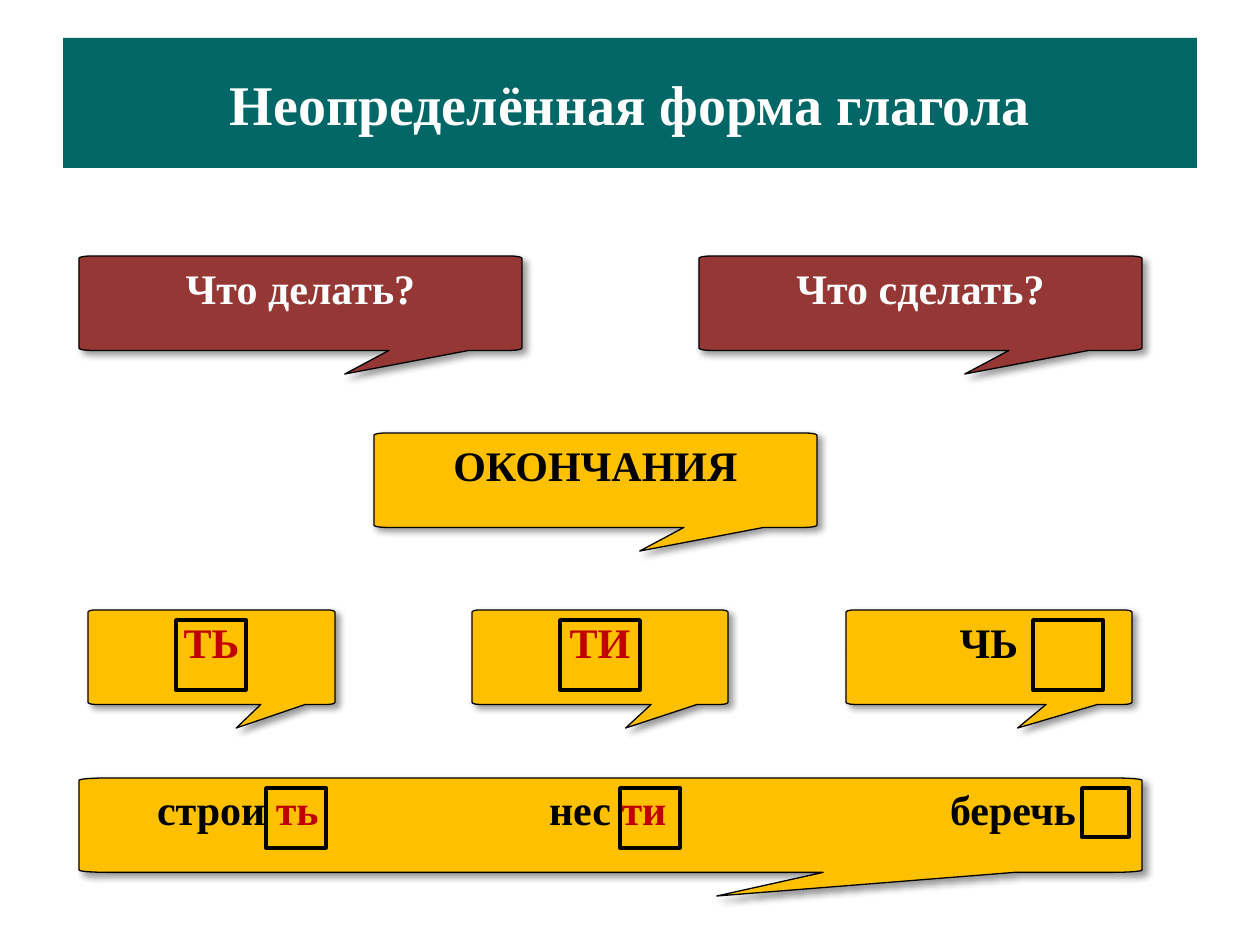
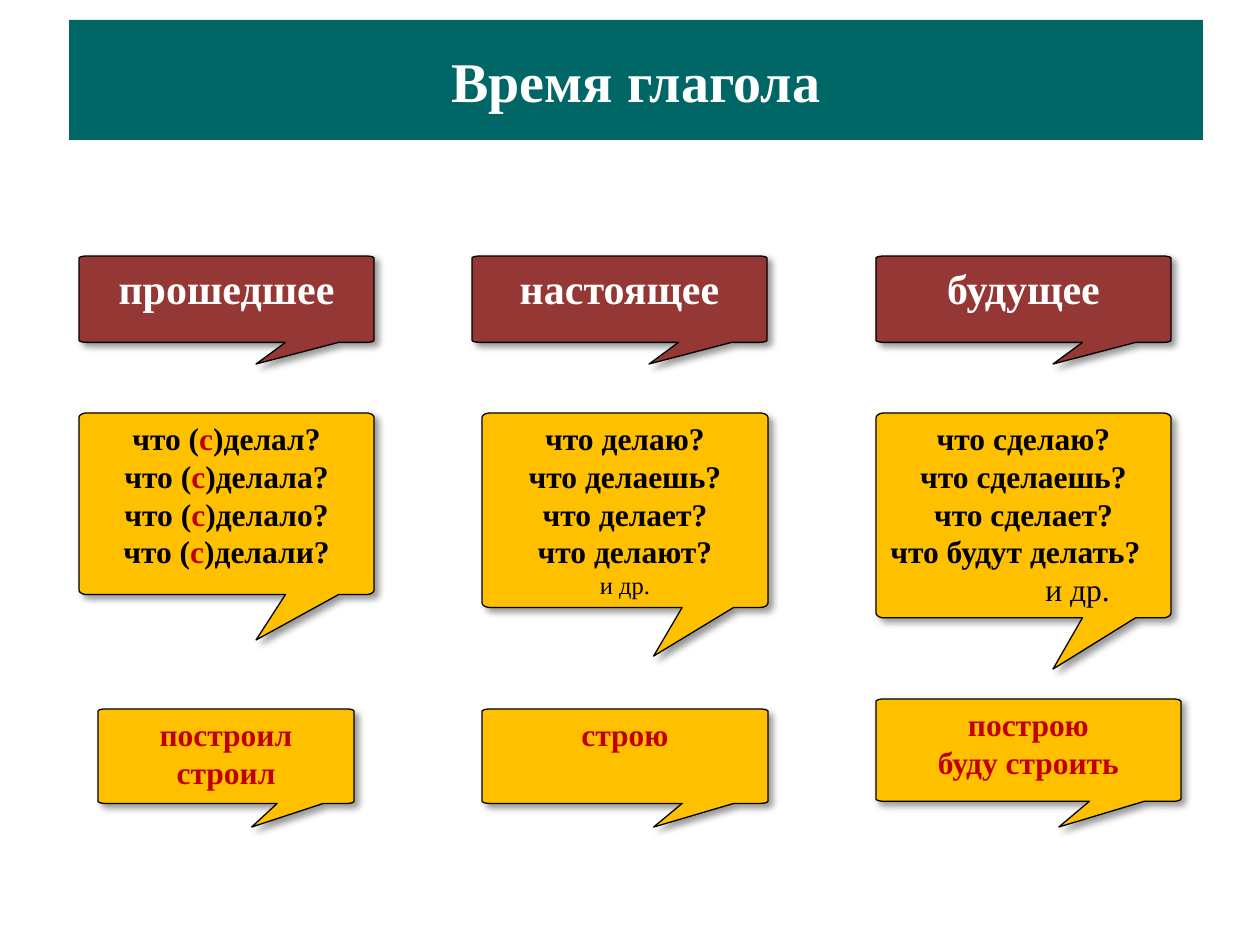
import math
from dataclasses import dataclass

import pptx
import pptx.dml.color
import pptx.enum.shapes
import pptx.enum.text
import pptx.oxml
import pptx.oxml.ns
import pptx.util

ALIGN = pptx.enum.text.PP_ALIGN
ANCHOR = pptx.enum.text.MSO_ANCHOR
RECTANGLE = pptx.enum.shapes.MSO_SHAPE.RECTANGLE
PX_PER_INCH = 126


@dataclass(frozen=True)
class Theme:
    font: str = "Times New Roman"
    band: str = "006666"
    question: str = "953735"
    answer: str = "FFC000"
    accent: str = "C00000"
    dark: str = "000000"
    light: str = "FFFFFF"
    title_size: int = 32
    label_size: int = 24
    list_size: int = 18
    small_size: int = 14


@dataclass
class Line:
    """One paragraph: (text, colour) spans and the ways it differs from its neighbours."""
    spans: list
    size: int = 0
    bold: bool = True
    left: int = 0
    right: int = 0
    tabs: tuple = ()


THEME = Theme()


def px(length):
    return pptx.util.Emu(round(length * 914400 / PX_PER_INCH))


def rgb(code):
    return pptx.dml.color.RGBColor.from_string(code)


def plain(color, *texts):
    return [Line([(text, color)]) for text in texts]


def add_soft_shadow(shape):
    shape.shadow.inherit = False
    effects = shape._element.spPr.find(pptx.oxml.ns.qn("a:effectLst"))
    effects.append(pptx.oxml.parse_xml(
        f'<a:outerShdw {pptx.oxml.ns.nsdecls("a")} blurRad="50800" dist="38100" dir="2700000" '
        'algn="tl" rotWithShape="0"><a:srgbClr val="000000"><a:alpha val="40000"/>'
        '</a:srgbClr></a:outerShdw>'))


def callout_outline(left, top, width, height):
    """Rounded body over four fifths of the box, with a tail reaching its bottom edge."""
    right, bottom = left + width, top + 0.8 * height
    rx, ry = 0.027 * width, 0.02 * height

    def corner(center_x, center_y, start):
        angles = [math.radians(start + step * 15) for step in range(7)]
        return [(center_x + rx * math.cos(a), center_y + ry * math.sin(a)) for a in angles]

    tail = [(left + 0.88 * width, bottom), (left + 0.6 * width, top + height),
            (left + 0.7 * width, bottom)]
    points = (corner(left + rx, top + ry, 180) + corner(right - rx, top + ry, 270)
              + corner(right - rx, bottom - ry, 0) + tail + corner(left + rx, bottom - ry, 90))
    return [(px(x), px(y)) for x, y in points]


def write_line(para, line, size):
    para.alignment = ALIGN.LEFT if line.tabs else ALIGN.CENTER
    para.line_spacing = 1.0
    para.font.name = THEME.font
    para.font.size = pptx.util.Pt(line.size or size)
    para.font.bold = line.bold
    properties = para._p.get_or_add_pPr()
    properties.set("marL", str(px(line.left)))
    properties.set("marR", str(px(line.right)))
    if line.tabs:
        stops = "".join(f'<a:tab pos="{px(stop)}" algn="l"/>' for stop in line.tabs)
        tab_list = pptx.oxml.parse_xml(
            f'<a:tabLst {pptx.oxml.ns.nsdecls("a")}>{stops}</a:tabLst>')
        properties.find(pptx.oxml.ns.qn("a:defRPr")).addprevious(tab_list)
    for text, color in line.spans:
        span = para.add_run()
        span.text = text
        span.font.color.rgb = rgb(color)


def add_callout(page, box, fill, lines, size=THEME.label_size):
    start, *rest = callout_outline(*box)
    builder = page.shapes.build_freeform(*start, scale=1.0)
    builder.add_line_segments(rest, close=True)
    shape = builder.convert_to_shape()
    shape.fill.solid()
    shape.fill.fore_color.rgb = rgb(fill)
    shape.line.color.rgb = rgb(THEME.dark)
    shape.line.width = pptx.util.Pt(0.75)
    add_soft_shadow(shape)
    frame = shape.text_frame
    frame.word_wrap = True
    frame.vertical_anchor = ANCHOR.TOP
    frame.margin_left = frame.margin_right = frame.margin_top = px(6)
    for index, line in enumerate(lines):
        write_line(frame.add_paragraph() if index else frame.paragraphs[0], line, size)


def add_ending_frame(page, left, top, width, height):
    frame = page.shapes.add_shape(RECTANGLE, px(left), px(top), px(width), px(height))
    frame.shadow.inherit = False
    frame.fill.background()
    frame.line.color.rgb = rgb(THEME.dark)
    frame.line.width = pptx.util.Pt(2)


def add_titled_page(deck, text, left, top, width, height):
    page = deck.slides.add_slide(deck.slide_layouts.get_by_name("Title Only"))
    title = page.shapes.title
    title.left, title.top, title.width, title.height = map(px, (left, top, width, height))
    title.fill.solid()
    title.fill.fore_color.rgb = rgb(THEME.band)
    title.text_frame.text = text
    title.text_frame.vertical_anchor = ANCHOR.MIDDLE
    para = title.text_frame.paragraphs[0]
    para.alignment = ALIGN.CENTER
    para.font.name = THEME.font
    para.font.size = pptx.util.Pt(THEME.title_size)
    para.font.bold = True
    para.font.color.rgb = rgb(THEME.light)
    return page


def add_endings(page, top):
    endings = [  # text, colour, callout left and width, frame left and width
        ("ТЬ", THEME.accent, 88, 247, 176, 70),
        ("ТИ", THEME.accent, 472, 256, 560, 80),
        ("ЧЬ", THEME.dark, 846, 286, 1033, 70),
    ]
    for text, color, left, width, frame_left, frame_width in endings:
        add_callout(page, (left, top, width, 118), THEME.answer, plain(color, text))
        add_ending_frame(page, frame_left, top + 10, frame_width, 70)


def add_verb_examples(page, left, top):
    words = Line([("\tстрои ", THEME.dark), ("ть", THEME.accent),
                  ("\tнес ", THEME.dark), ("ти", THEME.accent),
                  ("\tберечь", THEME.dark)], tabs=(72, 464, 865))
    add_callout(page, (left, top, 1063, 118), THEME.answer, [words])
    for offset, width, height in [(187, 60, 60), (541, 60, 60), (1003, 47, 49)]:
        add_ending_frame(page, left + offset, top + 10, width, height)


def build_infinitive_page(deck):
    page = add_titled_page(deck, "Неопределённая форма глагола", 63, 38, 1134, 130)
    for column, question in enumerate(["Что делать?", "Что сделать?"]):
        add_callout(page, (79 + 620 * column, 256, 443, 118), THEME.question,
                    plain(THEME.light, question))
    add_callout(page, (374, 433, 443, 118), THEME.answer, plain(THEME.dark, "ОКОНЧАНИЯ"))
    add_endings(page, 610)
    add_verb_examples(page, 79, 778)


def build_tense_page(deck):
    page = add_titled_page(deck, "Время глагола", 69, 20, 1134, 120)
    for left, tense in [(79, "прошедшее"), (472, "настоящее"), (876, "будущее")]:
        add_callout(page, (left, 256, 295, 108), THEME.question, plain(THEME.light, tense))

    past = [Line([("что (", THEME.dark), ("с", THEME.accent), (f"){verb}?", THEME.dark)])
            for verb in ("делал", "делала", "делало", "делали")]
    present = plain(THEME.dark, "что делаю?", "что делаешь?", "что делает?", "что делают?")
    present.append(Line([("и др.", THEME.dark)], size=THEME.small_size, bold=False))
    future = plain(THEME.dark, "что сделаю?", "что сделаешь?", "что сделает?")
    future += [Line([("что будут делать?", THEME.dark)], right=16),
               Line([("и др.", THEME.dark)], bold=False, left=108)]
    answers = [
        ((79, 413, 295, 227), past),
        ((482, 413, 286, 243), present),
        ((876, 413, 295, 256), future),
        ((98, 709, 256, 118), plain(THEME.accent, "построил", "строил")),
        ((482, 709, 286, 118), plain(THEME.accent, "строю")),
        ((876, 699, 305, 128), plain(THEME.accent, "построю", "буду строить")),
    ]
    for box, lines in answers:
        add_callout(page, box, THEME.answer, lines, THEME.list_size)


def main():
    deck = pptx.Presentation()
    deck.slide_width, deck.slide_height = px(1260), px(945)
    build_infinitive_page(deck)
    build_tense_page(deck)
    deck.save("out.pptx")


if __name__ == "__main__":
    main()
